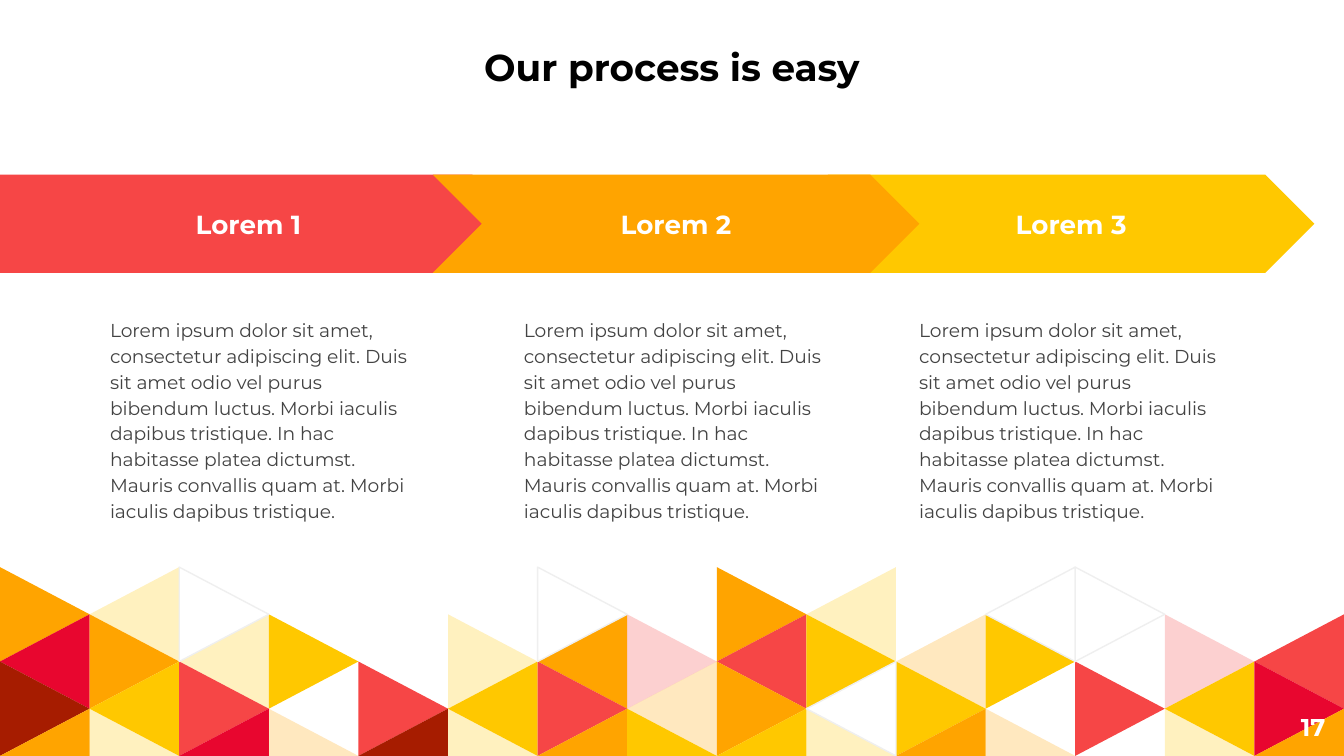
from dataclasses import dataclass

from lxml import etree
from pptx import Presentation, util as u
from pptx.dml.color import RGBColor
from pptx.enum import shapes, text
from pptx.oxml.ns import qn


@dataclass(frozen=True)
class Theme:
    font: str = "Montserrat"
    black: str = "000000"
    white: str = "FFFFFF"
    body: str = "434343"
    outline: str = "EFEFEF"
    coral: str = "F64646"
    orange: str = "FFA400"
    yellow: str = "FFC800"
    red: str = "E8062F"
    brown: str = "A61C00"
    title_size: float = 20
    step_size: float = 14
    number_size: float = 13
    body_size: float = 10
    tint: int = 25


@dataclass(frozen=True)
class Step:
    label: str
    left: float
    width: float
    body_left: float
    color: str
    outline: shapes.MSO_SHAPE = shapes.MSO_SHAPE.CHEVRON


@dataclass(frozen=True)
class Triangle:
    column: int
    row: int
    code: str


THEME = Theme()
WIDTH, HEIGHT = 10, 5.625
BODY = (
    "Lorem ipsum dolor sit amet, consectetur adipiscing elit. Duis sit amet "
    "odio vel purus bibendum luctus. Morbi iaculis dapibus tristique. In hac "
    "habitasse platea dictumst. Mauris convallis quam at. Morbi iaculis "
    "dapibus tristique."
)
STEPS = (
    Step("Lorem 3", 6.16, 3.62, 6.74, THEME.yellow),
    Step("Lorem 1", 0, 3.88, 0.72, THEME.coral, shapes.MSO_SHAPE.PENTAGON),
    Step("Lorem 2", 3.22, 3.62, 3.8, THEME.orange),
)

# Uppercase is solid, lowercase is tinted, W is outlined and a dot is a gap.
MOSAIC = (
    "OyW...W.Oy.WW..",
    "ROyY.yOcCYoY.cC",
    "BYC.CYCoOWY.CYR",
    "OyRoByOYYyOo.yO",
)
MOSAIC_COLORS = {
    "O": THEME.orange, "Y": THEME.yellow, "C": THEME.coral,
    "R": THEME.red, "B": THEME.brown, "W": THEME.white,
}
MOSAIC_TOP = 4.22
COLUMN = WIDTH / len(MOSAIC[0])
ROW = (HEIGHT - MOSAIC_TOP) / len(MOSAIC)


def paint(shape, color: str) -> None:
    shape.shadow.inherit = False
    shape.fill.solid()
    shape.fill.fore_color.rgb = RGBColor.from_string(color)
    shape.line.fill.background()


def write(shape, content: str, *, size: float, color: str, bold: bool = False,
          align=text.PP_ALIGN.LEFT, anchor=text.MSO_ANCHOR.TOP,
          spacing: float = 1.0) -> None:
    frame = shape.text_frame
    frame.word_wrap = True
    frame.vertical_anchor = anchor
    frame.margin_left = frame.margin_right = u.Inches(0.1)
    frame.margin_top = frame.margin_bottom = u.Inches(0.1)
    paragraph = frame.paragraphs[0]
    paragraph.alignment = align
    paragraph.line_spacing = spacing
    run = paragraph.add_run()
    run.text = content
    run.font.name = THEME.font
    run.font.size = u.Pt(size)
    run.font.bold = bold
    run.font.color.rgb = RGBColor.from_string(color)


def add_text(slide, left: float, top: float, width: float, height: float,
             content: str, **style) -> None:
    box = slide.shapes.add_textbox(*map(u.Inches, (left, top, width, height)))
    write(box, content, **style)


def draw_triangle(slide, triangle: Triangle) -> None:
    left = triangle.column * COLUMN
    right = left + COLUMN
    top = MOSAIC_TOP + triangle.row * ROW
    base, tip = (left, right) if (triangle.column + triangle.row) % 2 == 0 else (right, left)
    if triangle.row == len(MOSAIC) - 1:
        corners = [(base, top), (tip, HEIGHT), (base, HEIGHT)]
    else:
        corners = [(base, top), (tip, top + ROW), (base, top + 2 * ROW)]
    start, *rest = [(u.Inches(x), u.Inches(y)) for x, y in corners]
    builder = slide.shapes.build_freeform(*start)
    builder.add_line_segments(rest, close=True)
    piece = builder.convert_to_shape()
    paint(piece, MOSAIC_COLORS[triangle.code.upper()])
    if triangle.code == "W":
        piece.line.color.rgb = RGBColor.from_string(THEME.outline)
        piece.line.width = u.Pt(0.75)
    elif triangle.code.islower():
        color = piece.fill._xPr.find(qn("a:solidFill"))[0]
        etree.SubElement(color, qn("a:alpha"), val=str(THEME.tint * 1000))


def draw_mosaic(slide) -> None:
    triangles = [
        Triangle(column, row, code)
        for row, codes in enumerate(MOSAIC)
        for column, code in enumerate(codes)
        if code != "."
    ]
    for triangle in sorted(triangles, key=lambda item: item.code == "W"):
        draw_triangle(slide, triangle)


def draw_step(slide, step: Step) -> None:
    arrow = slide.shapes.add_shape(
        step.outline, *map(u.Inches, (step.left, 1.3, step.width, 0.73)))
    arrow.adjustments[0] = 0.5
    paint(arrow, step.color)
    write(arrow, step.label, size=THEME.step_size, color=THEME.white, bold=True,
          align=text.PP_ALIGN.CENTER, anchor=text.MSO_ANCHOR.MIDDLE)
    add_text(slide, step.body_left, 2.25, 2.45, 2.86, BODY,
             size=THEME.body_size, color=THEME.body, spacing=1.15)


def main() -> None:
    deck = Presentation()
    deck.slide_width, deck.slide_height = u.Inches(WIDTH), u.Inches(HEIGHT)
    slide = deck.slides.add_slide(deck.slide_layouts[6])
    draw_mosaic(slide)
    add_text(slide, 0, 0, WIDTH, 0.76, "Our process is easy",
             size=THEME.title_size, color=THEME.black, bold=True,
             align=text.PP_ALIGN.CENTER, anchor=text.MSO_ANCHOR.BOTTOM)
    add_text(slide, 9.36, 5.19, 0.6, 0.43, "17",
             size=THEME.number_size, color=THEME.white, bold=True,
             align=text.PP_ALIGN.RIGHT, anchor=text.MSO_ANCHOR.MIDDLE)
    for step in STEPS:
        draw_step(slide, step)
    deck.save("out.pptx")


if __name__ == "__main__":
    main()
